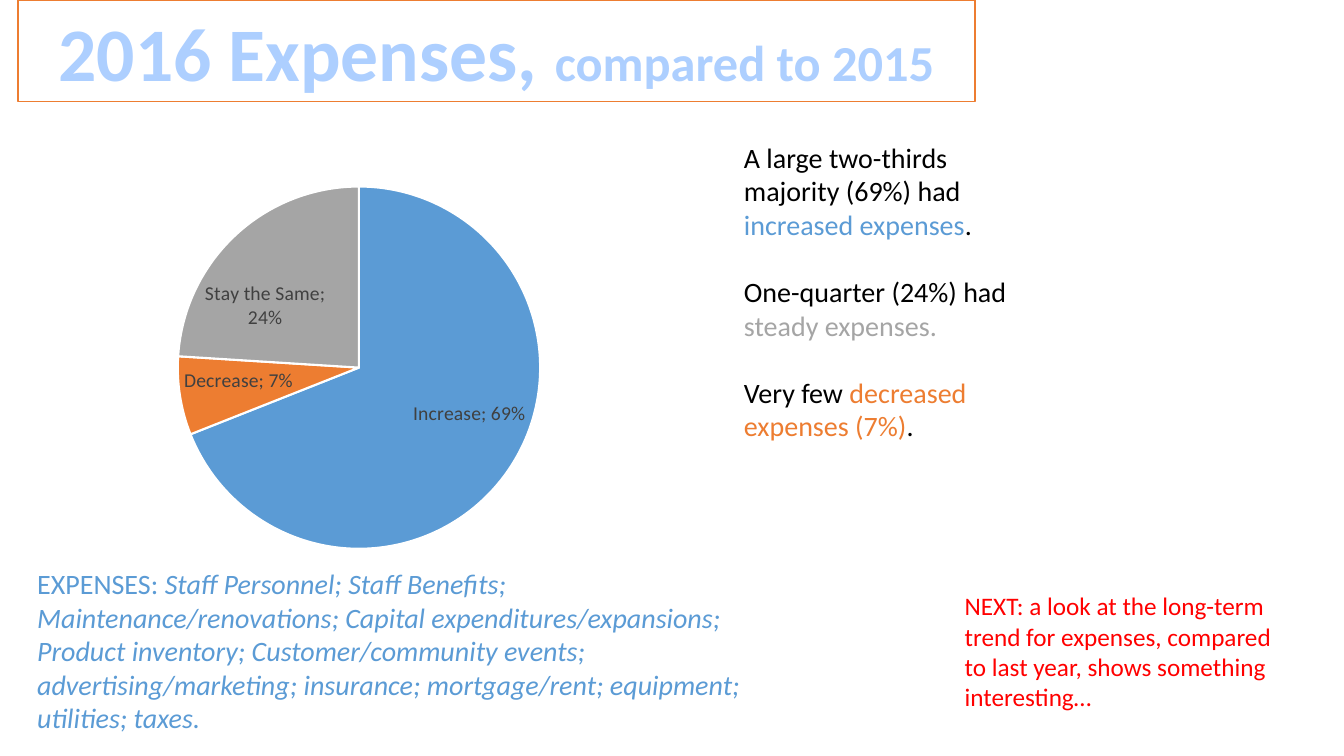
import lxml.etree
import pptx
import pptx.chart.data
import pptx.dml.color
import pptx.enum.chart
import pptx.enum.shapes
import pptx.enum.text
import pptx.oxml
import pptx.oxml.ns
import pptx.util

Inches = pptx.util.Inches
Pt = pptx.util.Pt

FONT = "Calibri"
BLACK = "000000"
WHITE = "FFFFFF"
BLUE = "5B9BD5"
ORANGE = "ED7D31"
GRAY = "A5A5A5"
PALE_BLUE = "ADCFFF"
RED = "FF0000"

# Each outcome: label, share, slice colour
OUTCOMES = [
    ("Increase", 0.69, BLUE),
    ("Decrease", 0.07, ORANGE),
    ("Stay the Same", 0.24, GRAY),
]


def rgb(value):
    return pptx.dml.color.RGBColor.from_string(value)


def add_run(paragraph, text, size, color, bold=False, italic=False):
    run = paragraph.add_run()
    run.text = text
    run.font.name = FONT
    run.font.size = Pt(size)
    run.font.bold = bold
    run.font.italic = italic
    run.font.color.rgb = rgb(color)


def add_title(slide, left, top, width, height):
    banner = slide.shapes.add_shape(
        pptx.enum.shapes.MSO_SHAPE.RECTANGLE,
        Inches(left), Inches(top), Inches(width), Inches(height))
    banner.shadow.inherit = False
    banner.fill.solid()
    banner.fill.fore_color.rgb = rgb(WHITE)
    banner.line.color.rgb = rgb(ORANGE)
    banner.line.width = Pt(1)
    frame = banner.text_frame
    frame.word_wrap = True
    frame.vertical_anchor = pptx.enum.text.MSO_ANCHOR.MIDDLE
    heading = frame.paragraphs[0]
    heading.alignment = pptx.enum.text.PP_ALIGN.CENTER
    add_run(heading, "2016 Expenses, ", 54, PALE_BLUE, bold=True)
    add_run(heading, "compared to 2015", 36, PALE_BLUE, bold=True)


def place_pie(chart, x, y, width, height):
    """Fix the pie's inner area, in fractions of the chart's box."""
    plot_area = chart.element.find(".//" + pptx.oxml.ns.qn("c:plotArea"))
    for layout in plot_area.findall(pptx.oxml.ns.qn("c:layout")):
        plot_area.remove(layout)
    plot_area.insert(0, pptx.oxml.parse_xml(
        f'<c:layout {pptx.oxml.ns.nsdecls("c")}><c:manualLayout>'
        '<c:layoutTarget val="inner"/>'
        '<c:xMode val="edge"/><c:yMode val="edge"/>'
        f'<c:x val="{x}"/><c:y val="{y}"/>'
        f'<c:w val="{width}"/><c:h val="{height}"/>'
        '</c:manualLayout></c:layout>'))


def add_expense_pie(slide, left, top, width, height):
    shares = pptx.chart.data.CategoryChartData(number_format="0%")
    shares.categories = [label for label, _, _ in OUTCOMES]
    shares.add_series("Series 1", [share for _, share, _ in OUTCOMES])
    chart = slide.shapes.add_chart(
        pptx.enum.chart.XL_CHART_TYPE.PIE,
        Inches(left), Inches(top), Inches(width), Inches(height), shares).chart
    chart.has_title = False
    chart.has_legend = False
    chart.font.name = FONT
    chart.font.size = Pt(10)
    chart.font.color.rgb = rgb(BLACK)
    place_pie(chart, 0.21, 0.13, 0.76, 0.79)

    pie = chart.plots[0]
    pie.vary_by_categories = True
    for index, (_, _, color) in enumerate(OUTCOMES):
        pie_slice = pie.series[0].points[index].format
        pie_slice.fill.solid()
        pie_slice.fill.fore_color.rgb = rgb(color)
        pie_slice.line.color.rgb = rgb(WHITE)
        pie_slice.line.width = Pt(1.5)

    labels = pie.series[0].data_labels
    labels.show_category_name = True
    labels.show_value = True
    labels.number_format = "0%"
    labels.number_format_is_linked = False
    labels.position = pptx.enum.chart.XL_LABEL_POSITION.BEST_FIT
    labels.font.name = FONT
    labels.font.size = Pt(14)
    labels.font.color.rgb = rgb("404040")
    for bubble_flag in chart.element.iter(pptx.oxml.ns.qn("c:showBubbleSize")):
        separator = lxml.etree.Element(pptx.oxml.ns.qn("c:separator"))
        separator.text = "; "
        bubble_flag.addnext(separator)


def add_note(slide, left, top, width, height, paragraphs, size, gap=0):
    """Write paragraphs of (text, colour, italic) runs, gap points apart."""
    frame = slide.shapes.add_textbox(
        Inches(left), Inches(top), Inches(width), Inches(height)).text_frame
    frame.word_wrap = True
    for index, runs in enumerate(paragraphs):
        paragraph = frame.add_paragraph() if index else frame.paragraphs[0]
        paragraph.space_before = Pt(gap if index else 0)
        for text, color, italic in runs:
            add_run(paragraph, text, size, color, italic=italic)


def build_expenses_slide(presentation):
    slide = presentation.slides.add_slide(presentation.slide_layouts[6])
    add_title(slide, 0.18, 0, 9.49, 1.01)
    add_expense_pie(slide, 0.77, 1.26, 4.73, 4.55)

    findings = [
        [("A large two-thirds majority (69%) had ", BLACK, False),
         ("increased expenses", BLUE, False), (".", BLACK, False)],
        [("One-quarter (24%) had ", BLACK, False),
         ("steady expenses.", GRAY, False)],
        [("Very few ", BLACK, False),
         ("decreased expenses (7%)", ORANGE, False), (".", BLACK, False)],
    ]
    add_note(slide, 7.28, 1.34, 3.05, 3.13, findings, 20, gap=24)

    expense_types = [[
        ("EXPENSES: ", BLUE, False),
        ("Staff Personnel; Staff Benefits; Maintenance/renovations; "
         "Capital expenditures/expansions; Product inventory; "
         "Customer/community events; advertising/marketing; insurance; "
         "mortgage/rent; equipment; utilities; taxes.", BLUE, True),
    ]]
    add_note(slide, 0.27, 5.57, 7.32, 1.78, expense_types, 20)

    next_topic = [[
        ("NEXT: a look at the long-term trend for expenses, compared to "
         "last year, shows something interesting…", RED, False),
    ]]
    add_note(slide, 9.47, 5.81, 3.44, 1.31, next_topic, 18)


def main():
    presentation = pptx.Presentation()
    presentation.slide_width = Inches(13.33)
    presentation.slide_height = Inches(7.5)
    build_expenses_slide(presentation)
    presentation.save("out.pptx")


if __name__ == "__main__":
    main()
